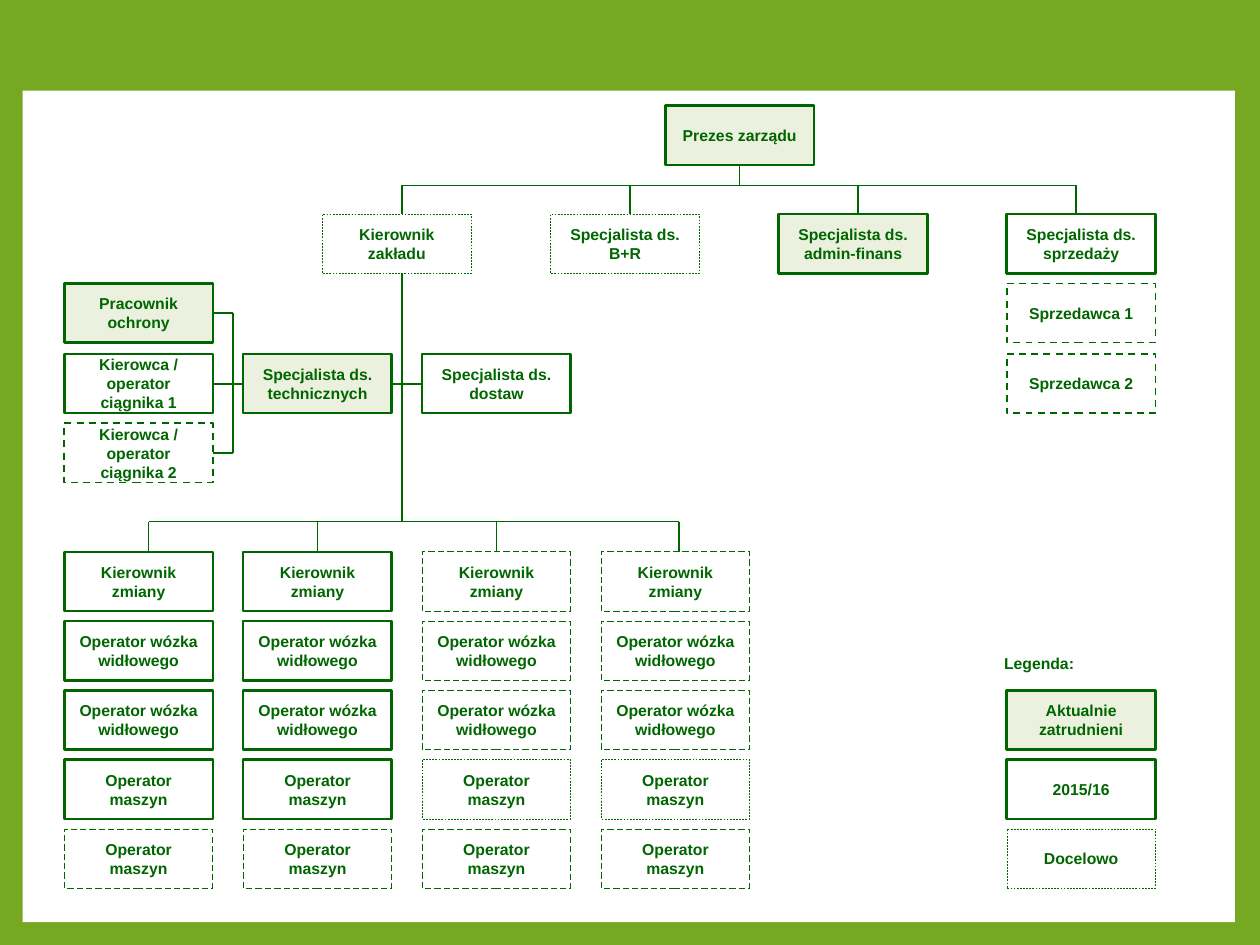
import pptx
import pptx.util
import pptx.dml.color
import pptx.enum.dml
import pptx.enum.shapes
import pptx.enum.text
import pptx.oxml.ns
import lxml.etree

Inches = pptx.util.Inches
Pt = pptx.util.Pt

COLORS = {"frame": "77A821", "page": "FFFFFF", "dark": "006600", "pale": "EBF1DE"}

STYLES = {
    "now": (1.5, False, "pale"),
    "next": (1.5, False, None),
    "dash": (1, True, None),
    "thin": (0.01, True, None),
    "dots": (0.25, True, None),
}

WIDE, HIGH = 1.18, 0.47
HEADS = [2.56 + 1.81 * i for i in range(4)]
COLS = [0.51 + 1.42 * i for i in range(4)]
TOPS = [1.7, 2.25, 2.81, 3.36]
LOWS = [4.38 + 0.55 * i for i in range(5)]

STAFF = [
    ("boss", "Prezes zarządu", 5.28, 0.84, "now"),
    ("plant", "Kierownik zakładu", HEADS[0], TOPS[0], "dots"),
    ("lab", "Specjalista ds. B+R", HEADS[1], TOPS[0], "dots"),
    ("admin", "Specjalista ds. admin-finans", HEADS[2], TOPS[0], "now"),
    ("sales", "Specjalista ds. sprzedaży", HEADS[3], TOPS[0], "next"),
    ("seller 1", "Sprzedawca 1", HEADS[3], TOPS[1], "dash"),
    ("seller 2", "Sprzedawca 2", HEADS[3], TOPS[2], "dash"),
    ("guard", "Pracownik ochrony", COLS[0], TOPS[1], "now"),
    ("driver 1", "Kierowca / operator ciągnika 1", COLS[0], TOPS[2], "next"),
    ("driver 2", "Kierowca / operator ciągnika 2", COLS[0], TOPS[3], "dash"),
    ("tech", "Specjalista ds. technicznych", COLS[1], TOPS[2], "now"),
    ("supply", "Specjalista ds. dostaw", COLS[2], TOPS[2], "next"),
    ("key 1", "Aktualnie zatrudnieni", HEADS[3], LOWS[2], "now"),
    ("key 2", "2015/16", HEADS[3], LOWS[3], "next"),
    ("key 3", "Docelowo", HEADS[3], LOWS[4], "dots"),
]

SHIFT = [
    ("Kierownik zmiany", "next next thin thin"),
    ("Operator wózka widłowego", "next next thin thin"),
    ("Operator wózka widłowego", "next next thin thin"),
    ("Operator maszyn", "next next dots dots"),
    ("Operator maszyn", "thin thin thin thin"),
]

BAR, RAIL, SPINE, SIDE = 1.47, 4.14, 3.19, 1.85
MIDS = [top + HIGH / 2 for top in TOPS]
EDGE = COLS[0] + WIDE

LINES = [
    ((SPINE, BAR), (8.54, BAR), 0.01, None, None),
    ((5.87, BAR), (5.87, 1.31), 0.75, None, ("boss", 2)),
    ((SPINE, TOPS[0] + HIGH), (SPINE, RAIL), 1, None, None),
    ((1.18, RAIL), (5.39, RAIL), 1, None, None),
    ((SIDE, MIDS[1]), (SIDE, MIDS[3]), 1, None, None),
    ((EDGE, MIDS[1]), (SIDE, MIDS[1]), 1, ("guard", 3), None),
    ((EDGE, MIDS[3]), (SIDE, MIDS[3]), 1, ("driver 2", 3), None),
    ((EDGE, MIDS[2]), (COLS[1], MIDS[2]), 1, ("driver 1", 3), ("tech", 1)),
    ((COLS[1] + WIDE, MIDS[2]), (COLS[2], MIDS[2]), 1, ("tech", 3), ("supply", 1)),
]
LINES += [((x, BAR), (x, TOPS[0]), 0.75, None, None) for x in (SPINE, 5, 6.81, 8.54)]
LINES += [
    ((x, RAIL), (x, LOWS[0]), 0.75, None, join)
    for x, join in (
        (1.18, None),
        (2.52, ((0, 1), 0)),
        (3.94, ((0, 2), 0)),
        (5.39, None),
    )
]


def color(name):
    return pptx.dml.color.RGBColor.from_string(COLORS[name])


def write(shape, text, size=9, bold=True, tint="dark", align="CENTER", anchor="MIDDLE"):
    frame = shape.text_frame
    frame.word_wrap = True
    frame.vertical_anchor = pptx.enum.text.MSO_ANCHOR[anchor]
    para = frame.paragraphs[0]
    para.alignment = pptx.enum.text.PP_ALIGN[align]
    run = para.add_run()
    run.text = text
    run.font.name = "Arial"
    run.font.size = Pt(size)
    run.font.bold = bold
    run.font.color.rgb = color(tint)


def block(slide, left, top, wide, high, fill=None, line=None, width=0.75):
    shape = slide.shapes.add_shape(
        pptx.enum.shapes.MSO_SHAPE.RECTANGLE,
        Inches(left), Inches(top), Inches(wide), Inches(high),
    )
    shape.shadow.inherit = False
    if fill:
        shape.fill.solid()
        shape.fill.fore_color.rgb = color(fill)
    else:
        shape.fill.background()
    if line:
        shape.line.color.rgb = color(line)
        shape.line.width = Pt(width)
    else:
        shape.line.fill.background()
    return shape


def card(slide, text, left, top, style):
    width, dash, fill = STYLES[style]
    shape = block(slide, left, top, WIDE, HIGH, fill, "dark", width)
    if dash:
        shape.line.dash_style = pptx.enum.dml.MSO_LINE.DASH
    write(shape, text)
    return shape


def link(slide, cards, start, end, width, tail, head):
    line = slide.shapes.add_connector(
        pptx.enum.shapes.MSO_CONNECTOR.STRAIGHT,
        *[Inches(value) for value in start + end],
    )
    line.line.color.rgb = color("dark")
    line.line.width = Pt(width)
    lxml.etree.SubElement(line._element.spPr, pptx.oxml.ns.qn("a:effectLst"))
    if tail:
        line.begin_connect(cards[tail[0]], tail[1])
    if head:
        line.end_connect(cards[head[0]], head[1])


def main():
    deck = pptx.Presentation()
    deck.slide_width, deck.slide_height = Inches(10), Inches(7.5)
    slide = deck.slides.add_slide(deck.slide_layouts[6])
    block(slide, 0, 0, 10, 7.5, "frame", "frame")
    block(slide, 0.18, 0.72, 9.62, 6.6, "page")

    cards = {}
    for name, text, left, top, style in STAFF:
        cards[name] = card(slide, text, left, top, style)
    for row, (text, styles) in enumerate(SHIFT):
        for col, style in enumerate(styles.split()):
            cards[row, col] = card(slide, text, COLS[col], LOWS[row], style)
    for line in LINES:
        link(slide, cards, *line)

    label = slide.shapes.add_textbox(Inches(7.87), Inches(5.14), Inches(1.22), Inches(0.25))
    write(label, "Legenda:", align="LEFT", anchor="TOP")
    deck.save("out.pptx")


if __name__ == "__main__":
    main()
